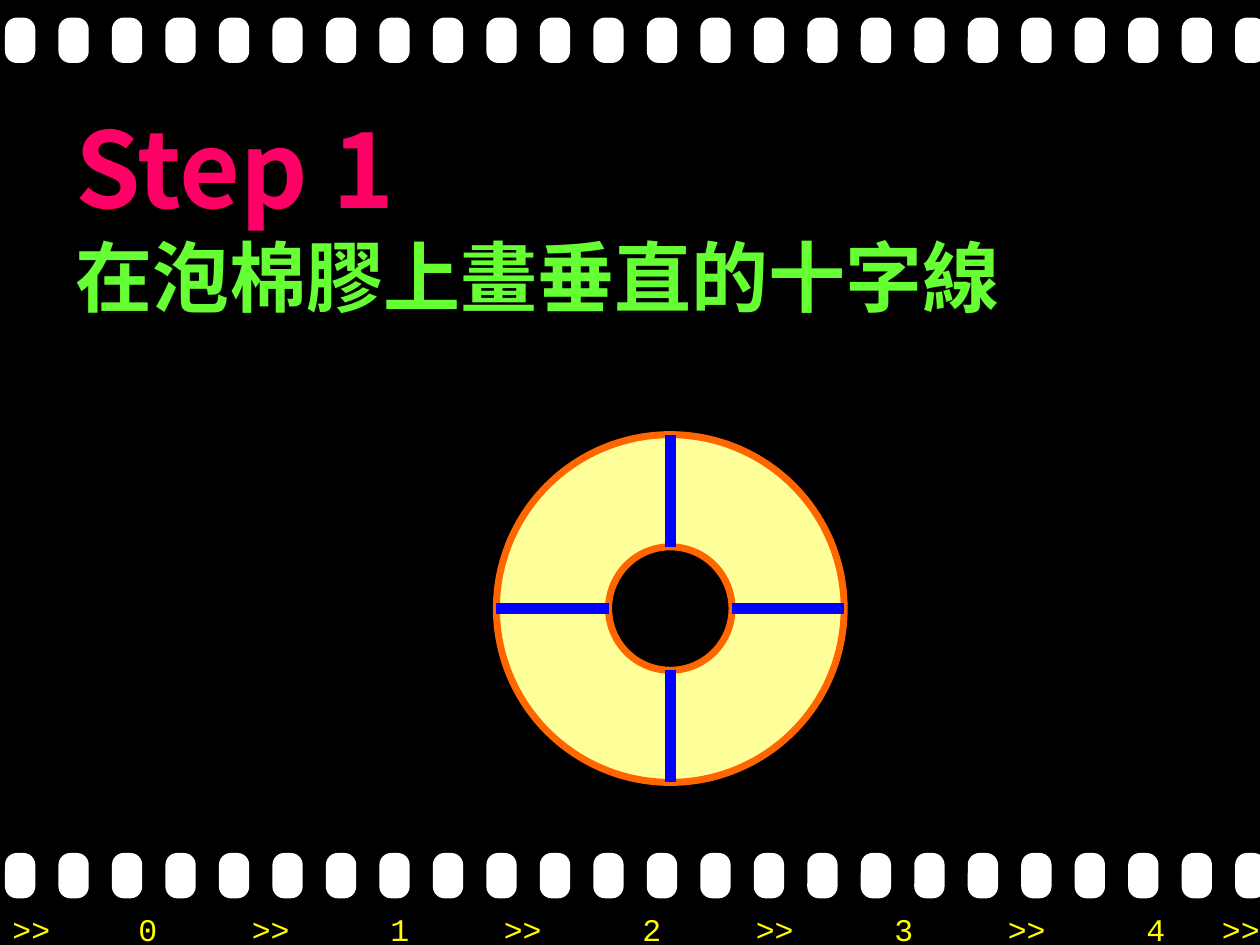
from typing import NamedTuple

from lxml import etree
from pptx import Presentation
from pptx import util as u
from pptx.dml.color import RGBColor
from pptx.enum import shapes, text
from pptx.oxml.ns import qn

BLACK, WHITE, YELLOW = "000000", "FFFFFF", "FFFF00"
CREAM, ORANGE, BLUE = "FFFF99", "FF6600", "0000FF"
PINK, GREEN = "FF0066", "66FF33"
TITLE_FONT, FRAME_FONT = "Noto Sans CJK SC", "Courier New"

HOLE_COUNT, HOLE_PITCH = 24, 0.4245
CENTER_X, CENTER_Y = 5.32, 4.83
OUTER_RADIUS, INNER_RADIUS = 1.38, 0.49


class Circle(NamedTuple):
    radius: float
    fill: str


class Direction(NamedTuple):
    x: int
    y: int


class TitleLine(NamedTuple):
    words: str
    size: int
    color: str


CIRCLES = [Circle(OUTER_RADIUS, CREAM), Circle(INNER_RADIUS, BLACK)]
DIRECTIONS = [Direction(-1, 0), Direction(1, 0), Direction(0, -1), Direction(0, 1)]
TITLE_LINES = [
    TitleLine("Step 1", 60, PINK),
    TitleLine("在泡棉膠上畫垂直的十字線", 44, GREEN),
]


def set_color(color_format, color: str) -> None:
    color_format.rgb = RGBColor.from_string(color)


def paint(fill, color: str) -> None:
    fill.solid()
    set_color(fill.fore_color, color)


def add_film_holes(slide, top: float) -> None:
    for index in range(HOLE_COUNT):
        hole = slide.shapes.add_shape(
            shapes.MSO_SHAPE.ROUNDED_RECTANGLE,
            u.Inches(0.04 + index * HOLE_PITCH), u.Inches(top),
            u.Inches(0.24), u.Inches(0.36),
        )
        hole.adjustments[0] = 0.39
        hole.shadow.inherit = False
        paint(hole.fill, WHITE)
        hole.line.fill.background()


def add_frame_numbers(slide) -> None:
    """Write the film's frame numbers and arrows on tab stops."""
    box = slide.shapes.add_textbox(
        u.Inches(0), u.Inches(7.17), u.Inches(10.2), u.Inches(0.4))
    box.text_frame.word_wrap = True
    paragraph = box.text_frame.paragraphs[0]
    paragraph.text = ">>\t" + "\t>>\t".join(str(number) for number in range(5)) + "\t>>"
    tab_list = etree.SubElement(paragraph._p.get_or_add_pPr(), qn("a:tabLst"))
    for position in (1, 1.9, 3, 3.9, 5, 5.9, 7, 7.9, 9, 9.6):
        etree.SubElement(tab_list, qn("a:tab"), pos=str(u.Inches(position)), algn="l")
    font = paragraph.runs[0].font
    font.name, font.size = FRAME_FONT, u.Pt(18)
    set_color(font.color, YELLOW)


def add_title(slide) -> None:
    box = slide.shapes.add_textbox(
        u.Inches(0.5), u.Inches(0.6), u.Inches(9), u.Inches(2.17))
    frame = box.text_frame
    frame.word_wrap = True
    frame.vertical_anchor = text.MSO_ANCHOR.MIDDLE
    paragraph = frame.paragraphs[0]
    paragraph.text = "\v".join(line.words for line in TITLE_LINES)
    for run, line in zip(paragraph.runs, TITLE_LINES):
        run.font.name, run.font.size, run.font.bold = TITLE_FONT, u.Pt(line.size), True
        set_color(run.font.color, line.color)
        etree.SubElement(run.font._element, qn("a:ea"), typeface=TITLE_FONT)


def add_circle(slide, circle: Circle) -> None:
    shape = slide.shapes.add_shape(
        shapes.MSO_SHAPE.OVAL,
        u.Inches(CENTER_X - circle.radius), u.Inches(CENTER_Y - circle.radius),
        u.Inches(2 * circle.radius), u.Inches(2 * circle.radius),
    )
    shape.shadow.inherit = False
    paint(shape.fill, circle.fill)
    set_color(shape.line.color, ORANGE)
    shape.line.width = u.Pt(4)


def add_cross_line(slide, direction: Direction) -> None:
    """Draw one arm of the cross between the two circles."""
    start, end = (
        (u.Inches(CENTER_X + direction.x * radius), u.Inches(CENTER_Y + direction.y * radius))
        for radius in (INNER_RADIUS, OUTER_RADIUS)
    )
    line = slide.shapes.add_connector(shapes.MSO_CONNECTOR.STRAIGHT, *start, *end)
    set_color(line.line.color, BLUE)
    line.line.width = u.Pt(6)
    etree.SubElement(line._element.spPr, qn("a:effectLst"))


def main() -> None:
    presentation = Presentation()
    presentation.slide_width, presentation.slide_height = u.Inches(10), u.Inches(7.5)
    slide = presentation.slides.add_slide(presentation.slide_layouts[6])
    paint(slide.background.fill, BLACK)
    for top in (6.77, 0.14):
        add_film_holes(slide, top)
    add_frame_numbers(slide)
    add_title(slide)
    for circle in CIRCLES:
        add_circle(slide, circle)
    for direction in DIRECTIONS:
        add_cross_line(slide, direction)
    presentation.save("out.pptx")


if __name__ == "__main__":
    main()
